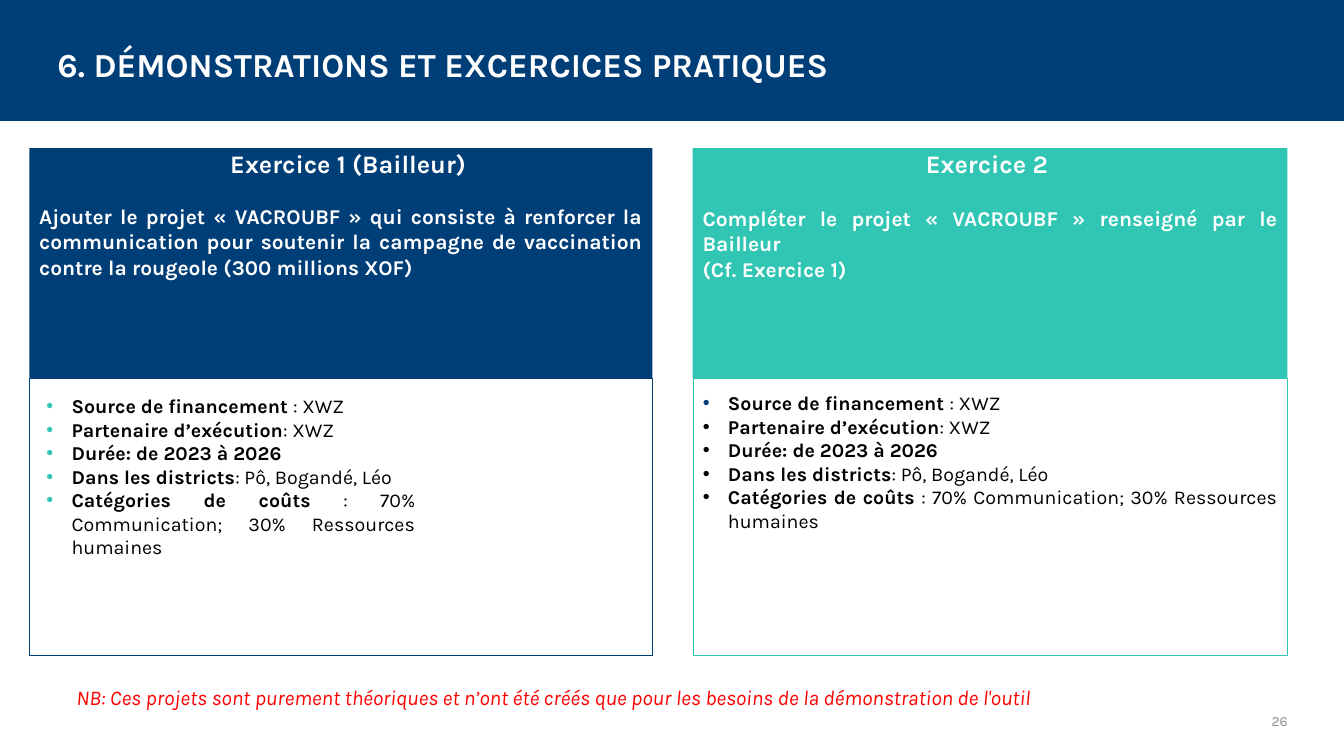
from lxml import etree
from pptx import Presentation
from pptx import util as u
from pptx.dml.color import RGBColor
from pptx.enum import shapes, text
from pptx.oxml import ns

NAVY, TEAL, WHITE, BLACK = "003E78", "31C6B3", "FFFFFF", "000000"
LEFT, JUSTIFY = text.PP_ALIGN.LEFT, text.PP_ALIGN.JUSTIFY
CENTER, RIGHT = text.PP_ALIGN.CENTER, text.PP_ALIGN.RIGHT
TOP, MIDDLE = text.MSO_ANCHOR.TOP, text.MSO_ANCHOR.MIDDLE


def colour(code):
    return RGBColor.from_string(code)


class ExerciseSlide:
    """Draws styled elements on one slide."""

    font = "Karla"

    def __init__(self, deck):
        self.slide = deck.slides.add_slide(deck.slide_layouts[3])
        self.bodies = self.slide.placeholders

    def box(self, spot, fill=None, line=None):
        panel = self.slide.shapes.add_shape(
            shapes.MSO_SHAPE.RECTANGLE, *map(u.Inches, spot))
        panel.shadow.inherit = False
        if fill:
            panel.fill.solid()
            panel.fill.fore_color.rgb = colour(fill)
        else:
            panel.fill.background()
        self.outline(panel, line)
        return panel

    def outline(self, panel, line):
        if line:
            panel.line.color.rgb = colour(line)
            panel.line.width = u.Pt(0.25)
        else:
            panel.line.fill.background()

    def band(self, spot, fill):
        strip = self.box(spot, fill)
        self.slide.shapes._spTree.insert(2, strip._element)

    def frame(self, holder, anchor=TOP, top=0.05, bottom=0.05):
        area = holder.text_frame
        area.word_wrap = True
        area.auto_size = text.MSO_AUTO_SIZE.NONE
        area.vertical_anchor = anchor
        area.margin_left = area.margin_right = u.Inches(0.1)
        area.margin_top, area.margin_bottom = u.Inches(top), u.Inches(bottom)
        return area

    def add_lines(self, area, lines, size, ink, align=LEFT, italic=False):
        for number, pieces in enumerate(lines):
            line = area.add_paragraph() if number else area.paragraphs[0]
            line.alignment = align
            line.space_before = u.Pt(0)
            for words, bold in pieces:
                run = line.add_run()
                run.text = words
                run.font.name = self.font
                run.font.size = u.Pt(size)
                run.font.bold = bold
                run.font.italic = italic
                run.font.color.rgb = colour(ink)

    def place(self, holder, spot):
        holder.left, holder.top, holder.width, holder.height = map(u.Inches, spot)

    def title(self, words, spot):
        heading = self.slide.shapes.title
        self.place(heading, spot)
        self.add_lines(self.frame(heading, MIDDLE, 0, 0), [[(words, True)]], 24, WHITE)

    def label(self, words, spot, size, ink, align=LEFT, anchor=TOP,
              bold=False, italic=False):
        note = self.slide.shapes.add_textbox(*map(u.Inches, spot))
        self.add_lines(self.frame(note, anchor), [[(words, bold)]],
                       size, ink, align, italic)

    def task(self, spot, fill, lines, top):
        panel = self.box(spot, fill)
        self.add_lines(self.frame(panel, top=top), [[(words, True)] for words in lines],
                       15, WHITE, JUSTIFY)

    def details(self, body, spot, items, bullets, top=0.05, line=None):
        holder = self.bodies[body]
        self.place(holder, spot)
        self.outline(holder, line)
        area = self.frame(holder, top=top)
        self.add_lines(area, items, 14, BLACK, JUSTIFY)
        for item, bullet in zip(area.paragraphs, bullets):
            props = item._p.get_or_add_pPr()
            props.set("marL", str(u.Inches(0.25)))
            props.set("indent", str(-u.Inches(0.25)))
            tint = etree.SubElement(props, ns.qn("a:buClr"))
            etree.SubElement(tint, ns.qn("a:srgbClr"), val=bullet)
            etree.SubElement(props, ns.qn("a:buFont"), typeface="Arial")
            etree.SubElement(props, ns.qn("a:buChar"), char="•")


def project(shares):
    return [
        [("Source de financement ", True), (": XWZ", False)],
        [("Partenaire d’exécution", True), (": XWZ", False)],
        [("Durée: de 2023 à 2026", True)],
        [("Dans les districts", True), (": Pô, Bogandé, Léo", False)],
        [("Catégories de coûts ", True), (shares, False)],
    ]


def main():
    deck = Presentation()
    deck.slide_width, deck.slide_height = u.Inches(13.33), u.Inches(7.5)
    page = ExerciseSlide(deck)
    page.band((0, 0, 13.33, 1.2), NAVY)
    page.title("6. DÉMONSTRATIONS ET EXCERCICES PRATIQUES", (0.47, 0.19, 12.4, 0.9))

    page.box((0.29, 3.75, 6.18, 2.75), line=NAVY)
    page.details(1, (0.36, 3.86, 3.86, 1.75),
                 project(": 70% Communication; 30% Ressources humaines"), [TEAL] * 5)
    page.details(2, (6.87, 3.75, 5.9, 2.75),
                 project(": 70% Communication; 30% Ressources humaines"),
                 [NAVY] + [BLACK] * 4, top=0.13, line=TEAL)

    page.task((0.29, 1.47, 6.18, 2.28), NAVY, [
        "Ajouter le projet « VACROUBF » qui consiste à renforcer la communication "
        "pour soutenir la campagne de vaccination contre la rougeole "
        "(300 millions XOF)"], top=0.55)
    page.task((6.87, 1.47, 5.9, 2.28), TEAL, [
        "Compléter le projet « VACROUBF » renseigné par le Bailleur",
        "(Cf. Exercice 1)"], top=0.57)
    for heading, left, width in (("Exercice 1 (Bailleur) ", 1.44, 4.09),
                                 ("Exercice 2 ", 8.19, 3.26)):
        page.label(heading, (left, 1.47, width, 0.3), 18, WHITE, CENTER, MIDDLE, bold=True)

    page.label("NB: Ces projets sont purement théoriques et n’ont été créés que pour "
               "les besoins de la démonstration de l'outil",
               (0.66, 6.74, 12.2, 0.35), 15, "FF0000", italic=True)
    page.label("26", (9.87, 6.95, 3, 0.4), 10, "8C8C8C", RIGHT, MIDDLE)
    deck.save("out.pptx")


if __name__ == "__main__":
    main()
